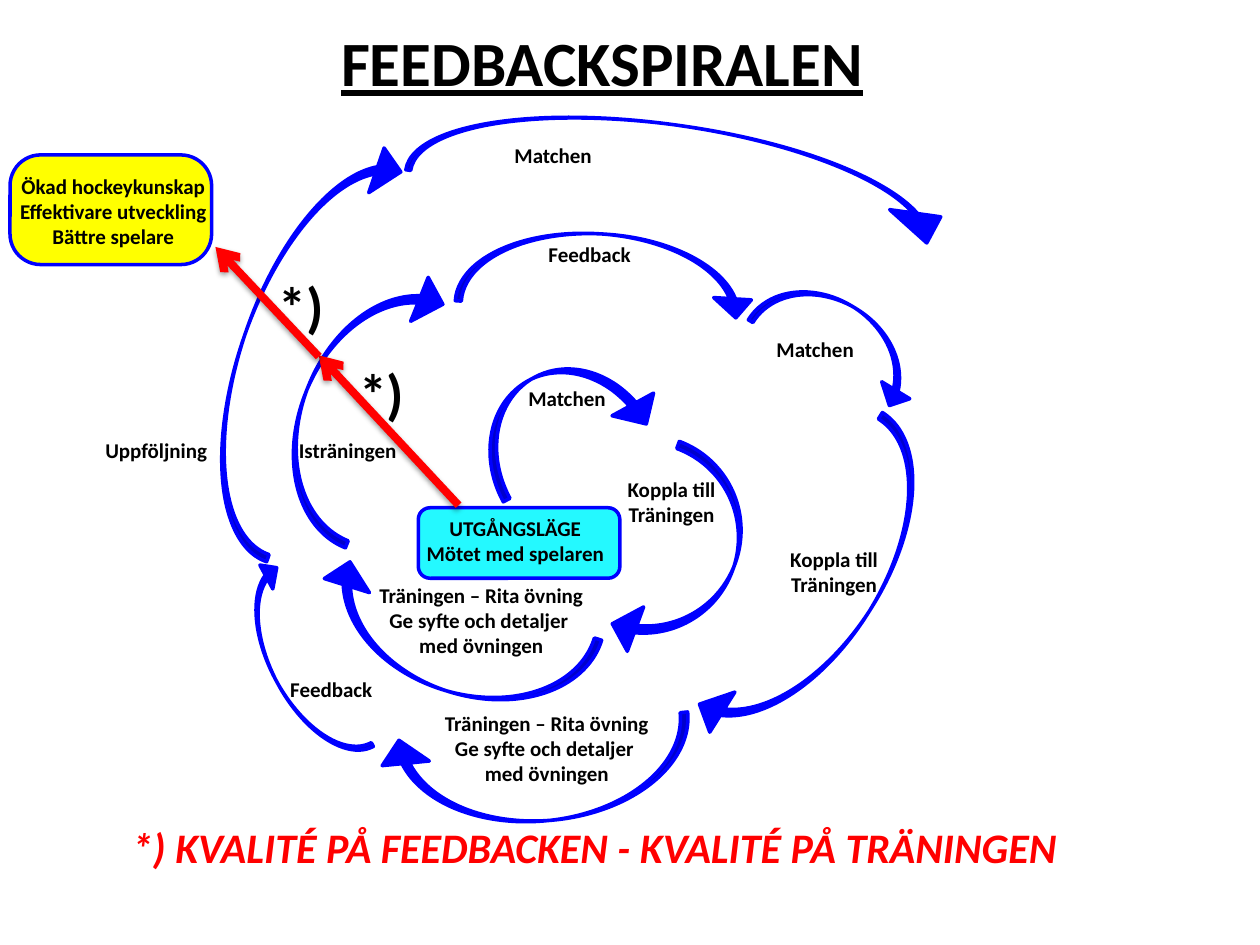
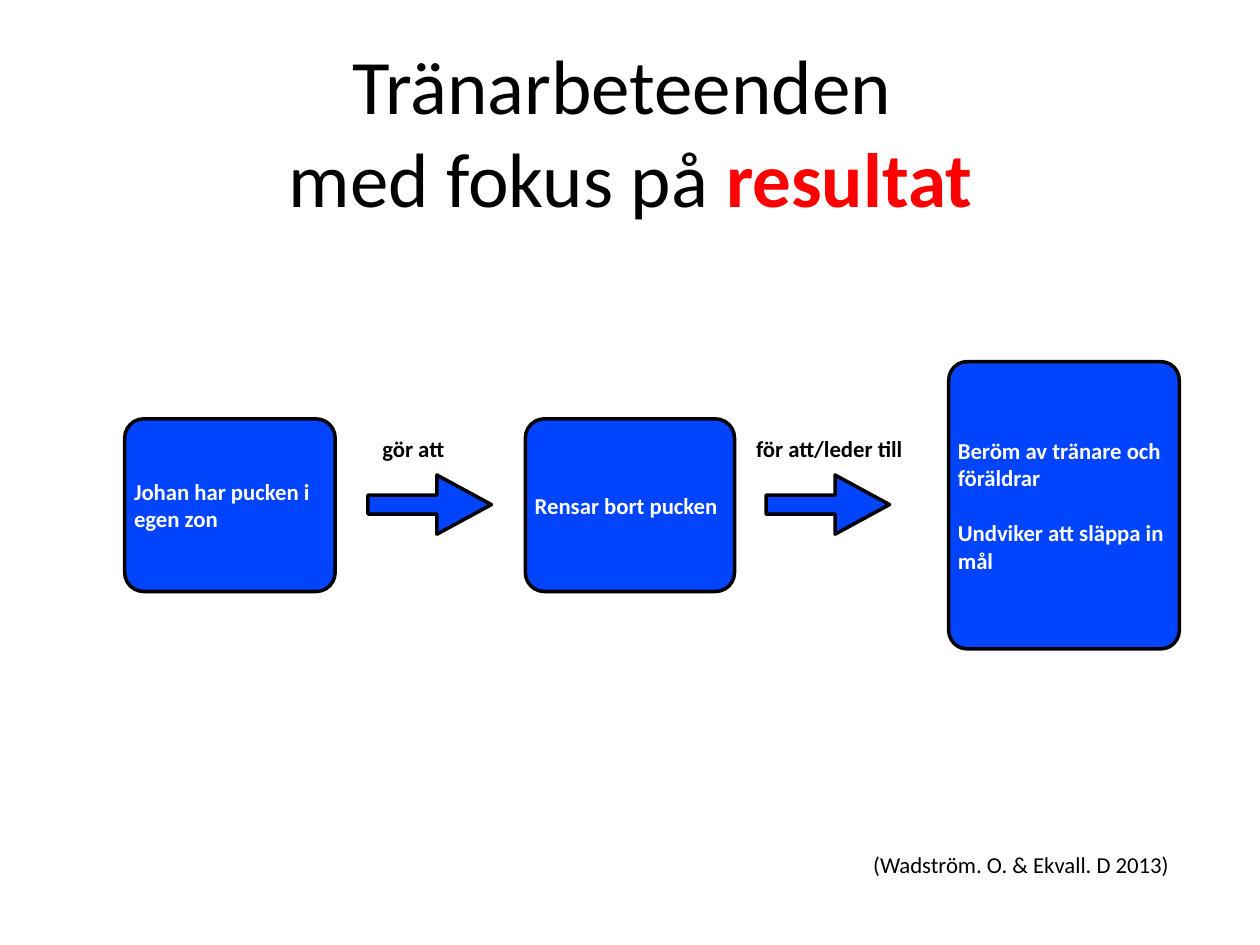
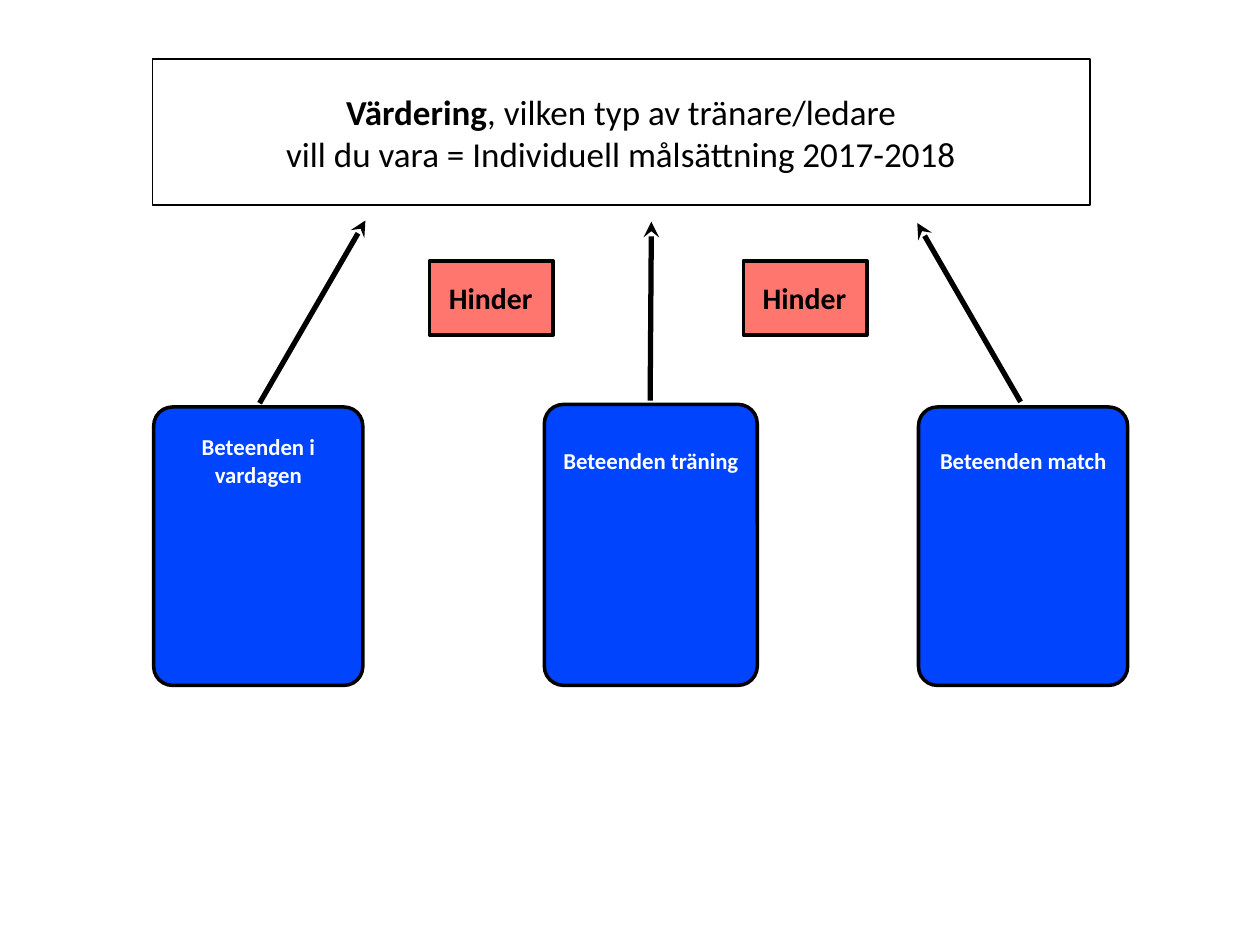
"""Builds three slides on feedback and coaching behaviours in ice hockey."""
from lxml import etree
from pptx import Presentation
from pptx.dml.color import RGBColor
from pptx.enum import shapes, text as txt
from pptx.oxml import parse_xml
from pptx.oxml.ns import nsdecls, qn
from pptx.util import Inches, Pt

BLACK = RGBColor(0x00, 0x00, 0x00)
WHITE = RGBColor(0xFF, 0xFF, 0xFF)
RED = RGBColor(0xFF, 0x00, 0x00)
YELLOW = RGBColor(0xFF, 0xFF, 0x00)
CYAN = RGBColor(0x24, 0xF9, 0xFF)
SPIRAL_BLUE = RGBColor(0x00, 0x00, 0xFF)
BOX_BLUE = RGBColor(0x00, 0x44, 0xFE)
SALMON = RGBColor(0xFF, 0x76, 0x6F)
FONT = "Calibri"
KIND = shapes.MSO_SHAPE
LEFT, CENTER = txt.PP_ALIGN.LEFT, txt.PP_ALIGN.CENTER
TOP, MIDDLE = txt.MSO_ANCHOR.TOP, txt.MSO_ANCHOR.MIDDLE
SHADOW = (
    '<a:outerShdw blurRad="38100" dist="20320" dir="5400000" rotWithShape="0">'
    '<a:srgbClr val="000000"><a:alpha val="38000"/></a:srgbClr></a:outerShdw>'
)


def put(page, at, text="", kind=None, fill=None, line=BLACK, width=2, adjust=(), turn=0,
        size=12, bold=True, italic=False, underline=False, colour=BLACK, accent=None,
        align=CENTER, anchor=MIDDLE, inset=(0, 0, 0, 0), wrap=True, gap=0):
    """Adds a shape or text box; newlines part paragraphs, \\v breaks lines, _ marks emphasis."""
    place = [Inches(length) for length in at]
    if kind is None:
        box = page.shapes.add_textbox(*place)
    else:
        box = page.shapes.add_shape(kind, *place)
        box.shadow.inherit = False
        box.rotation = turn
        for index, value in enumerate(adjust):
            box.adjustments[index] = value
        if fill is None:
            box.fill.background()
        else:
            box.fill.solid()
            box.fill.fore_color.rgb = fill
        box.line.color.rgb = line
        box.line.width = Pt(width)
    if not text:
        return
    frame = box.text_frame
    frame.word_wrap = wrap
    frame.vertical_anchor = anchor
    frame.margin_left, frame.margin_top, frame.margin_right, frame.margin_bottom = map(Inches, inset)
    for number, content in enumerate(text.split("\n")):
        para = frame.add_paragraph() if number else frame.paragraphs[0]
        para.alignment = align
        if number and gap:
            para.space_before = Pt(gap)
        for order, part in enumerate(content.split("_")):
            strong = order % 2 == 1
            for row, words in enumerate(part.split("\v")):
                if row:
                    para.add_line_break()
                    etree.SubElement(para._p[-1], qn("a:rPr"), sz=str(size * 100))
                if words:
                    span = para.add_run()
                    span.text = words
                    font = span.font
                    font.name, font.size = FONT, Pt(size)
                    font.bold, font.italic, font.underline = bold or strong, italic, underline
                    font.color.rgb = accent if strong and accent else colour


def join(page, start, end, colour, width, head, effect=""):
    """Adds a straight arrow that points at its end."""
    arrow = page.shapes.add_connector(shapes.MSO_CONNECTOR.STRAIGHT, *map(Inches, start + end))
    arrow.line.color.rgb = colour
    arrow.line.width = Pt(width)
    etree.SubElement(arrow.line._get_or_add_ln(), qn("a:tailEnd"), type=head)
    arrow._element.spPr.append(parse_xml(f'<a:effectLst {nsdecls("a")}>{effect}</a:effectLst>'))


deck = Presentation()
deck.slide_width, deck.slide_height = Inches(10), Inches(7.5)
spiral, results, values = [deck.slides.add_slide(deck.slide_layouts[6]) for _ in range(3)]

put(spiral, (0.08, 1.23, 1.6, 0.87), "Ökad hockeykunskap\nEffektivare utveckling\nBättre spelare",
    KIND.ROUNDED_RECTANGLE, YELLOW, SPIRAL_BLUE, adjust=[0.28], inset=(0.04, 0.02, 0, 0), wrap=False)
put(spiral, (3.32, 4.03, 1.6, 0.56), "UTGÅNGSLÄGE\vMötet med spelaren",
    KIND.ROUNDED_RECTANGLE, CYAN, SPIRAL_BLUE, inset=(0, 0, 0.06, 0.04))
put(spiral, (0.28, -0.14, 9, 1.25), "FEEDBACKSPIRALEN", size=36, underline=True, inset=[0.05] * 4)

CURVE = (0.08, 0.5, 0.25)
for at, turn, curve in [
    ((4.09, 2.56, 0.75, 1.48), 241.4, CURVE),
    ((5.07, 3.58, 0.75, 1.73), 20.2, CURVE),
    ((3.2, 3.96, 0.75, 2.28), 107.3, CURVE),
    ((2.44, 2.02, 0.75, 2.27), 201.8, CURVE),
    ((4.52, 0.97, 0.6, 2.38), 273.5, CURVE),
    ((6.43, 1.97, 0.52, 1.44), 301.3, CURVE),
    ((6.17, 3.25, 0.75, 2.92), 32.1, CURVE),
    ((3.88, 4.9, 0.75, 2.49), 84.4, CURVE),
    ((2.15, 4.41, 0.43, 1.72), 151.6, CURVE),
    ((1.95, 0.97, 0.75, 3.46), 199, CURVE),
    ((5.11, -0.86, 0.65, 4.38), 278, (0.06, 0.63, 0.34)),
]:
    put(spiral, at, kind=KIND.CURVED_LEFT_ARROW, fill=SPIRAL_BLUE, line=SPIRAL_BLUE,
        adjust=curve, turn=turn)

LINK = "Koppla till Träningen"
DRILL = "Träningen – Rita övning\vGe syfte och detaljer \vmed övningen"
for left, top, width, height, label, size in [
    (4.03, 3.01, 0.94, 0.3, "Matchen", 12),
    (4.86, 3.73, 0.94, 0.5, LINK, 12),
    (2.95, 4.57, 1.74, 0.71, DRILL, 12),
    (2.29, 3.42, 0.94, 0.3, "Isträningen", 12),
    (4.21, 1.87, 0.94, 0.3, "Feedback", 12),
    (6, 2.62, 0.94, 0.3, "Matchen", 12),
    (6.15, 4.29, 0.94, 0.5, LINK, 12),
    (3.47, 5.59, 1.74, 0.71, DRILL, 12),
    (2.16, 5.32, 0.94, 0.3, "Feedback", 12),
    (0.77, 3.42, 0.94, 0.3, "Uppföljning", 12),
    (3.92, 1.08, 0.94, 0.3, "Matchen", 12),
    (2.56, 2.8, 0.94, 0.64, "*)", 32),
    (1.92, 2.11, 0.94, 0.64, "*)", 32),
]:
    put(spiral, (left, top, width, height), label, size=size, anchor=TOP, inset=[0.05] * 4)

for start, end in [((3.64, 4.01), (2.53, 2.82)), ((2.53, 2.83), (1.71, 1.96))]:
    join(spiral, start, end, RED, 4.5, "arrow", SHADOW)
put(spiral, (0.18, 6.41, 9, 0.62), " *) KVALITÉ PÅ FEEDBACKEN - KVALITÉ PÅ TRÄNINGEN",
    size=24, italic=True, colour=RED, inset=[0.05] * 4)

TITLE_INSET = (0.05, 0.04, 0.05, 0.04)
put(results, (0.98, 0.4, 8.05, 1.27), "Tränarbeteenden \vmed fokus på _resultat_",
    size=44, bold=False, accent=RED, inset=TITLE_INSET)
for left, width, height, corner, label in [
    (0.99, 1.67, 1.37, 0.11, "Johan har pucken i egen zon"),
    (4.17, 1.66, 1.37, 0.11, "Rensar bort pucken"),
    (7.53, 1.83, 2.28, 0.08, "Beröm av tränare och föräldrar\nUndviker att släppa in mål"),
]:
    put(results, (left, 4.01 - height / 2, width, height), label, KIND.ROUNDED_RECTANGLE, BOX_BLUE,
        adjust=[corner], size=13, colour=WHITE, align=LEFT, inset=(0.03, 0, 0.03, 0), gap=16)
for arrow_left, label_left, label_width, label in [
    (2.92, 3.03, 0.5, "gör att"),
    (6.08, 5.99, 1.18, "för att/leder till"),
]:
    put(results, (arrow_left, 3.77, 0.98, 0.47), kind=KIND.RIGHT_ARROW, fill=BOX_BLUE,
        adjust=[0.32, 0.92])
    put(results, (label_left, 3.45, label_width, 0.22), label, size=13, wrap=False)
put(results, (6.93, 6.75, 2.39, 0.22), "(Wadström. O. & Ekvall. D 2013)",
    size=13, bold=False, align=LEFT, anchor=TOP, wrap=False)

put(values, (1.21, 0.47, 7.44, 1.16),
    "_Värdering_, vilken typ av tränare/ledare\vvill du vara = Individuell målsättning 2017-2018",
    KIND.RECTANGLE, width=1, size=20, bold=False, inset=TITLE_INSET)
for left, top, width, label, start, end in [
    (1.22, 3.23, 1.66, "Beteenden i vardagen", (2.06, 3.2), (2.9, 1.75)),
    (4.32, 3.21, 1.69, "Beteenden träning", (5.16, 3.18), (5.17, 1.76)),
    (7.29, 3.23, 1.66, "Beteenden match", (8.1, 3.19), (7.28, 1.77)),
]:
    put(values, (left, top, width, 5.44 - top), kind=KIND.ROUNDED_RECTANGLE, fill=BOX_BLUE,
        adjust=[0.09])
    put(values, (left + 0.03, 3.55, width - 0.06, 0.21), label, size=13, colour=WHITE)
    join(values, start, end, BLACK, 3, "stealth")
for left in (3.41, 5.9):
    put(values, (left, 2.07, 0.98, 0.59), "Hinder", KIND.RECTANGLE, SALMON, size=17,
        inset=(0.03, 0, 0.04, 0))

deck.save("out.pptx")
